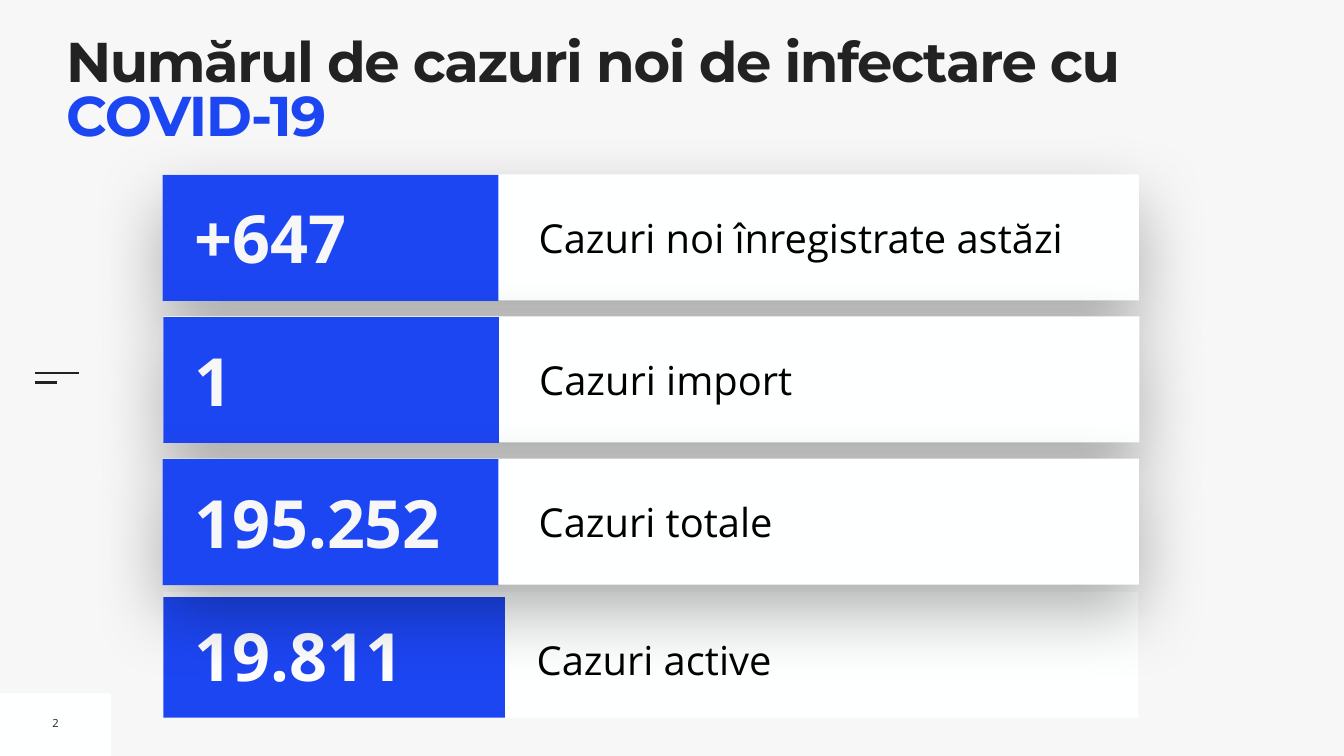
from dataclasses import dataclass

from lxml import etree
from pptx import Presentation
from pptx.dml.color import RGBColor
from pptx.enum.shapes import MSO_CONNECTOR, MSO_SHAPE
from pptx.enum.text import MSO_ANCHOR, MSO_AUTO_SIZE, PP_ALIGN
from pptx.oxml.ns import qn
from pptx.util import Pt

RECT = MSO_SHAPE.RECTANGLE
STRAIGHT = MSO_CONNECTOR.STRAIGHT
TOP, MIDDLE = MSO_ANCHOR.TOP, MSO_ANCHOR.MIDDLE
LEFT, CENTER = PP_ALIGN.LEFT, PP_ALIGN.CENTER
NO_FIT, GROW = MSO_AUTO_SIZE.NONE, MSO_AUTO_SIZE.SHAPE_TO_FIT_TEXT


@dataclass(frozen=True)
class Theme:
    background: str = "F7F7F7"
    panel: str = "FEFFFF"
    accent: str = "1D46F3"
    ink: str = "222222"
    label: str = "000000"
    white: str = "FFFFFF"
    heading_font: str = "Montserrat"
    body_font: str = "Open Sans"
    title_size: float = 80
    figure_size: float = 95
    label_size: float = 57
    page_size: float = 16


@dataclass(frozen=True)
class RowStyle:
    """Measures of a row, relative to the row's box."""
    badge: tuple
    figure_box: tuple
    label_box: tuple
    figure_color: str
    label_inset: float = 7.2
    label_format: tuple = ()
    shadow: bool = True


THEME = Theme()
SLIDE_WIDTH, SLIDE_HEIGHT = 1920.24, 1080

RAISED_ROW = RowStyle(badge=(0, 0.72, 479.5, 180),
                      figure_box=(38.2, 25.2, 434.2, 129.6),
                      label_box=(530, 48.2, 846.7, 83.5),
                      figure_color=THEME.background)
FLAT_ROW = RowStyle(badge=(0, 7.9, 488.2, 172.1),
                    figure_box=(38.2, 25.2, 434.2, 129.6),
                    label_box=(533.5, 41.8, 833.8, 90),
                    figure_color=THEME.white, label_inset=0,
                    label_format=(("line_spacing", 1.3), ("space_before", Pt(20))),
                    shadow=False)

RAISED_ROWS = (("+647", "Cazuri noi înregistrate astăzi", 232.56),
               ("1", "Cazuri import", 233.28),
               ("195.252", "Cazuri totale", 232.56))
FIRST_ROW_TOP, ROW_PITCH = 249.12, 203.04
ROW_WIDTH, ROW_HEIGHT = 1394.6, 180


def apply(target, values):
    for name, value in values.items():
        setattr(target, name, value)


def points(box):
    return [Pt(length) for length in box]


def within(box, part):
    """Move a part's box by the corner of the box that holds it."""
    return (box[0] + part[0], box[1] + part[1], part[2], part[3])


def set_frame(frame, inset, **values):
    sides = ("margin_left", "margin_top", "margin_right", "margin_bottom")
    apply(frame, dict.fromkeys(sides, Pt(inset)) | values)


def add_run(paragraph, text, font, size, color, bold=False):
    run = paragraph.add_run()
    run.text = text
    apply(run.font, {"name": font, "size": Pt(size), "bold": bold})
    run.font.color.rgb = RGBColor.from_string(color)
    return run


def add_block(shapes, box, color):
    block = shapes.add_shape(RECT, *points(box))
    block.shadow.inherit = False
    block.fill.solid()
    block.fill.fore_color.rgb = RGBColor.from_string(color)
    block.line.fill.background()
    return block


def add_text(shapes, box, text, size, color, bold=False, inset=7.2, wrap=True, **layout):
    text_box = shapes.add_textbox(*points(box))
    set_frame(text_box.text_frame, inset, word_wrap=wrap,
              vertical_anchor=MIDDLE, auto_size=GROW)
    paragraph = text_box.text_frame.paragraphs[0]
    apply(paragraph, layout)
    add_run(paragraph, text, THEME.body_font, size, color, bold)


def add_soft_shadow(block):
    effects = block._element.spPr.find(qn("a:effectLst"))
    shadow = etree.SubElement(effects, qn("a:outerShdw"), blurRad=str(Pt(100)),
                              dist=str(Pt(40)), dir="5400000", rotWithShape="0")
    color = etree.SubElement(shadow, qn("a:srgbClr"), val="000000")
    etree.SubElement(color, qn("a:alpha"), val="30000")


def build_title(slide, box):
    title = slide.shapes.title
    apply(title, dict(zip(("left", "top", "width", "height"), points(box))))
    set_frame(title.text_frame, 0, word_wrap=True, vertical_anchor=TOP, auto_size=NO_FIT)
    paragraph = title.text_frame.paragraphs[0]
    apply(paragraph, {"alignment": LEFT, "line_spacing": 0.8})
    for text, color in (("Numărul de cazuri noi de infectare cu ", THEME.ink),
                        ("COVID-19", THEME.accent)):
        run = add_run(paragraph, text, THEME.heading_font, THEME.title_size, color, True)
        run.font._element.set("spc", "-200")


def build_side_mark(slide, box):
    left, top, width, height = box
    # Long line above, half-length line below
    for y, length in ((top, width), (top + height, width / 2)):
        line = slide.shapes.add_connector(STRAIGHT, *points((left, y, left + length, y)))
        line.line.width = Pt(3)
        line.line.color.rgb = RGBColor.from_string(THEME.ink)
        etree.SubElement(line._element.spPr, qn("a:effectLst"))


def build_page_number(slide, box):
    add_block(slide.shapes, box, THEME.panel)
    add_text(slide.shapes, within(box, (67, 23.8, 24.5, 36.7)), "2",
             THEME.page_size, THEME.ink, wrap=False, alignment=CENTER)


def build_row(slide, box, figure, label, style):
    shapes = slide.shapes.add_group_shape().shapes
    panel = add_block(shapes, box, THEME.panel)
    if style.shadow:
        add_soft_shadow(panel)
    add_text(shapes, within(box, style.label_box), label, THEME.label_size,
             THEME.label, inset=style.label_inset, **dict(style.label_format))
    add_block(shapes, within(box, style.badge), THEME.accent)
    add_text(shapes, within(box, style.figure_box), figure, THEME.figure_size,
             style.figure_color, bold=True)


def main():
    deck = Presentation()
    apply(deck, {"slide_width": Pt(SLIDE_WIDTH), "slide_height": Pt(SLIDE_HEIGHT)})
    slide = deck.slides.add_slide(deck.slide_layouts[5])
    slide.background.fill.solid()
    slide.background.fill.fore_color.rgb = RGBColor.from_string(THEME.background)

    # Frame of the slide
    build_page_number(slide, (0, 990.7, 158.4, 89.3))
    build_side_mark(slide, (49.7, 533.5, 63.4, 13))
    build_title(slide, (94.3, 56.2, 1723.7, 113.8))

    # The flat row lies behind the shadows of the raised rows
    build_row(slide, (233.28, 845.3, 1393.2, ROW_HEIGHT),
              "19.811", "Cazuri active", FLAT_ROW)
    for index, (figure, label, left) in enumerate(RAISED_ROWS):
        top = FIRST_ROW_TOP + index * ROW_PITCH
        build_row(slide, (left, top, ROW_WIDTH, ROW_HEIGHT), figure, label, RAISED_ROW)

    deck.save("out.pptx")


if __name__ == "__main__":
    main()
